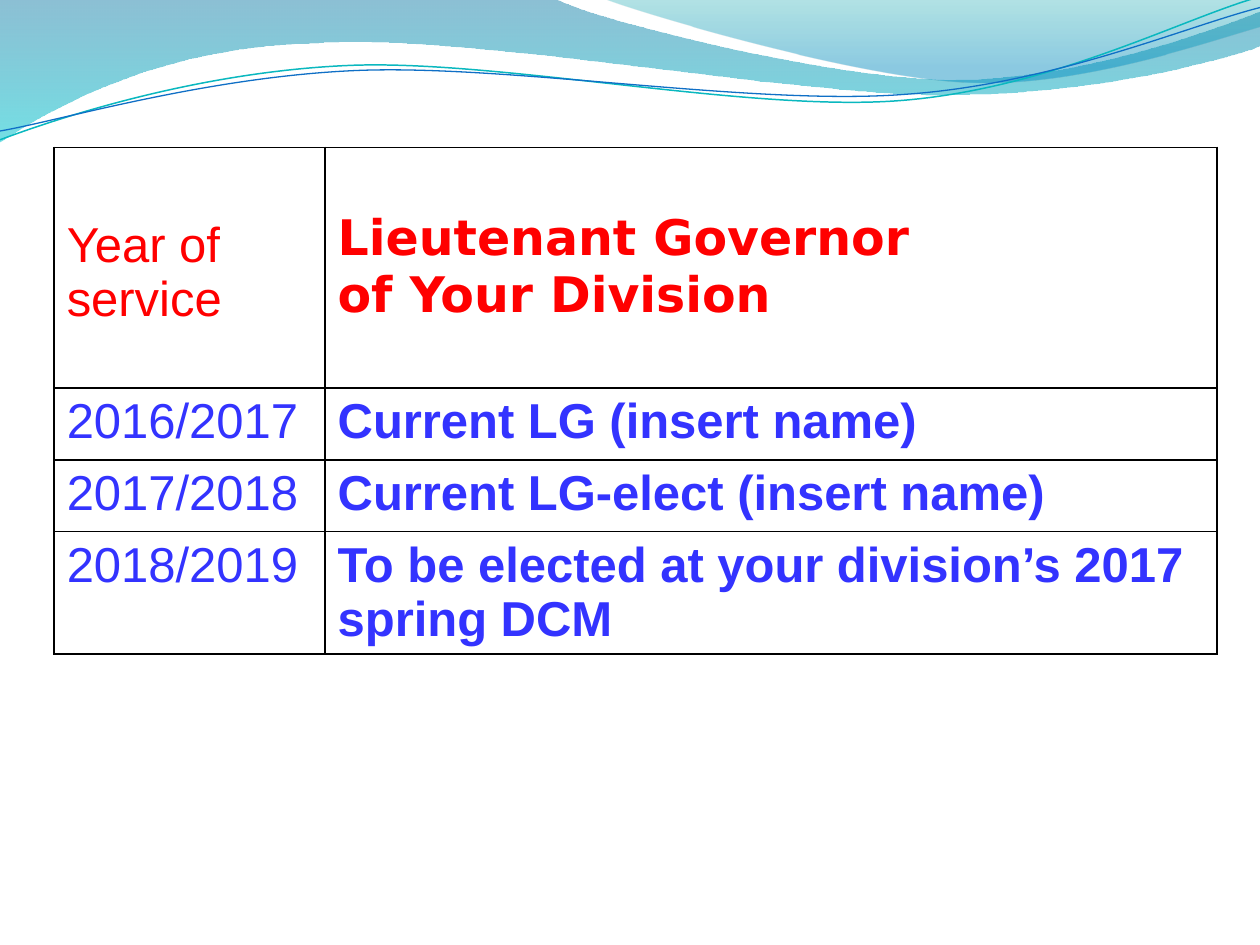
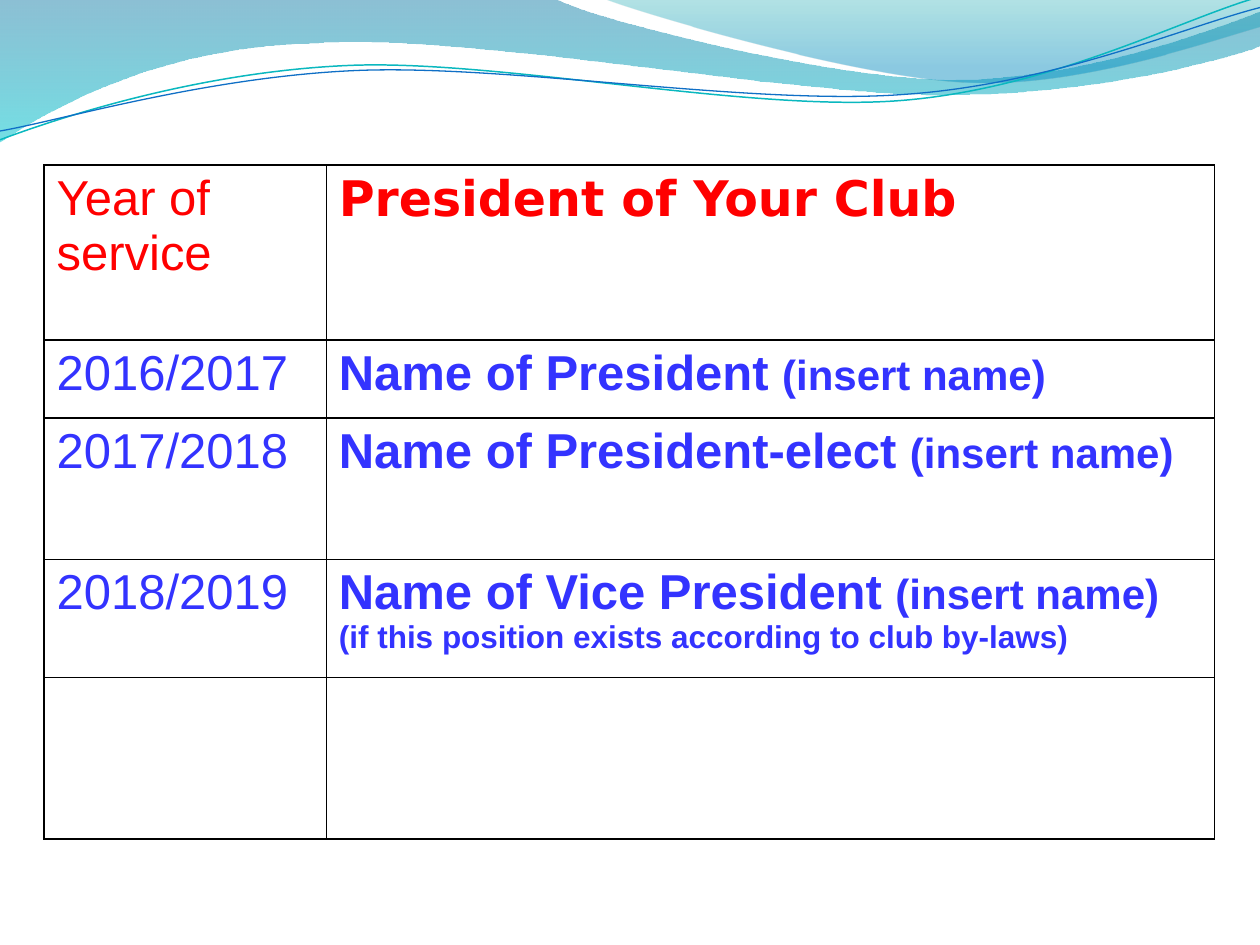
"""Build two slides listing the years of service of club and division leaders."""
import lxml.etree
import pptx
import pptx.dml.color
import pptx.oxml
import pptx.oxml.ns
import pptx.util

Inches = pptx.util.Inches
RGBColor = pptx.dml.color.RGBColor
qualified = pptx.oxml.ns.qn

RED = RGBColor(0xFF, 0x00, 0x00)
VIOLET = RGBColor(0x33, 0x33, 0xFF)
BLACK = RGBColor(0x00, 0x00, 0x00)
WAVE_BLUE = RGBColor(0x00, 0x74, 0xA1)
WAVE_TURQUOISE = RGBColor(0x00, 0xC6, 0xCF)
CREST_TEAL = RGBColor(0x00, 0xA1, 0xA9)
CREST_BLUE = RGBColor(0x00, 0x8B, 0xBF)
LINE_TEAL = RGBColor(0x0A, 0xB8, 0xBF)
LINE_BLUE = RGBColor(0x0F, 0x6F, 0xC6)

BODY_FONT = "Arial"
HEADING_FONT = "DejaVu Sans"

WAVE = [
    (0, 0), (4.4, -0.01), (4.76, 0.17, 6.64, 0.63, 7.58, 0.63),
    (8.53, 0.63, 9.58, 0.26, 10, 0.09), (10.01, 0.36),
    (9.83, 0.44, 8.7, 0.76, 7.46, 0.75), (6.22, 0.75, 3.82, 0.28, 2.57, 0.34),
    (1.29, 0.36, 0.46, 0.83, -0.01, 1.13), (0, 0),
]
CREST = [
    (4.79, -0.01), (5.09, 0.11, 6.82, 0.62, 7.69, 0.65),
    (8.56, 0.69, 9.61, 0.32, 10, 0.21), (10, 0), (4.79, -0.01),
]
TEAL_CURVE = [
    (0, 1.11), (0.48, 0.93, 1.58, 0.57, 2.77, 0.52),
    (3.95, 0.47, 5.93, 0.89, 7.13, 0.8), (8.33, 0.71, 9.38, 0.15, 9.98, -0.02),
]
BLUE_CURVE = [
    (0, 1.04), (0.47, 0.96, 1.64, 0.61, 2.83, 0.56),
    (4.03, 0.51, 5.97, 0.84, 7.17, 0.75), (8.36, 0.67, 9.41, 0.21, 10, 0.06),
]


def write_text(paragraph, text, size=28, font=BODY_FONT, color=VIOLET, bold=False):
    """Add a formatted run to a paragraph."""
    run = paragraph.add_run()
    run.text = text
    run.font.size = pptx.util.Pt(size)
    run.font.name = font
    run.font.color.rgb = color
    run.font.bold = bold


def bend_lines(shape, outline):
    """Turn the straight segments that have control points into cubic curves."""
    lines = shape.element.findall(".//" + qualified("a:lnTo"))
    for line, segment in zip(lines, outline[1:]):
        if len(segment) == 2:
            continue
        controls = [
            lxml.etree.Element(qualified("a:pt"), x=str(Inches(x) - shape.left),
                               y=str(Inches(y) - shape.top))
            for x, y in (segment[:2], segment[2:4])
        ]
        curve = lxml.etree.Element(qualified("a:cubicBezTo"))
        curve.extend(controls + list(line))
        line.getparent().replace(line, curve)


class Deck:
    """Hold the shared style, the presentation and the current slide."""

    def __init__(self):
        """Start an empty presentation."""
        self.presentation = pptx.Presentation()
        self.presentation.slide_width = Inches(10)
        self.presentation.slide_height = Inches(7.5)
        self.layout = self.presentation.slide_layouts[6]
        self.slide = None

    def add_slide(self):
        """Make a new slide the current one."""
        self.slide = self.presentation.slides.add_slide(self.layout)

    def add_outline(self, outline, close):
        """Draw a freeform and place it on the shared layout."""
        points = [(Inches(segment[-2]), Inches(segment[-1])) for segment in outline]
        builder = self.slide.shapes.build_freeform(*points[0])
        builder.add_line_segments(points[1:], close=close)
        shape = builder.convert_to_shape()
        bend_lines(shape, outline)
        shape.shadow.inherit = False
        self.layout.shapes.element.append(shape.element)
        return shape

    def add_wave(self, outline, stops):
        """Add a translucent wave; stops are position, colour and opacity."""
        shape = self.add_outline(outline, close=True)
        shape.line.fill.background()
        shape.fill.gradient()
        shape.fill.gradient_angle = 270
        for stop, (position, color, opacity) in zip(shape.fill.gradient_stops, stops):
            stop.position = position
            stop.color.rgb = color
        gradient_stops = shape.element.findall(".//" + qualified("a:gs"))
        for gradient_stop, (position, color, opacity) in zip(gradient_stops, stops):
            alpha = lxml.etree.SubElement(gradient_stop[0], qualified("a:alpha"))
            alpha.set("val", str(opacity * 1000))

    def add_curve(self, outline, color, width):
        """Add an open curved line."""
        shape = self.add_outline(outline, close=False)
        shape.fill.background()
        shape.line.color.rgb = color
        shape.line.width = pptx.util.Pt(width)

    def add_borders(self, cell):
        """Give a cell thin black borders and no fill."""
        properties = cell._tc.get_or_add_tcPr()
        for side in "LRTB":
            properties.append(pptx.oxml.parse_xml(
                f'<a:ln{side} {pptx.oxml.ns.nsdecls("a")} w="12700"><a:solidFill>'
                f'<a:srgbClr val="{BLACK}"/></a:solidFill></a:ln{side}>'
            ))
        cell.fill.background()

    def add_table(self, left, top, widths, heights, rows):
        """Add a table; each cell lists paragraphs, each a list of text and format."""
        frame = self.slide.shapes.add_table(
            len(heights), len(widths), Inches(left), Inches(top),
            Inches(sum(widths)), Inches(sum(heights)))
        table = frame.table
        table.first_row = table.horz_banding = False
        for column, width in zip(table.columns, widths):
            column.width = Inches(width)
        for row, height in zip(table.rows, heights):
            row.height = Inches(height)
        for cell in table.iter_cells():
            self.add_borders(cell)
        for row, contents in zip(table.rows, rows):
            for cell, paragraphs in zip(row.cells, contents):
                for index, runs in enumerate(paragraphs):
                    text_frame = cell.text_frame
                    paragraph = text_frame.add_paragraph() if index else text_frame.paragraphs[0]
                    for text, style in runs:
                        write_text(paragraph, text, **style)
        return table


def header_row(*title_lines):
    """Return the red heading cells."""
    title_style = {"font": HEADING_FONT, "color": RED, "bold": True}
    return [[[("Year of service", {"color": RED})]],
            [[(line, title_style)] for line in title_lines]]


def year_row(year, name, hint="", note=""):
    """Return a year cell and a bold name cell with optional smaller text."""
    paragraphs = [[(name, {"bold": True})]]
    if hint:
        paragraphs[0].append((hint, {"bold": True, "size": 24}))
    if note:
        paragraphs.append([(note, {"bold": True, "size": 18})])
    return [[[(year, {})]], paragraphs]


def main():
    """Build and save the presentation."""
    deck = Deck()
    deck.add_slide()
    deck.add_wave(WAVE, [(0, WAVE_BLUE, 45), (1, WAVE_TURQUOISE, 55)])
    deck.add_wave(CREST, [(0, CREST_TEAL, 30), (0.8, CREST_BLUE, 45)])
    deck.add_curve(TEAL_CURVE, LINE_TEAL, 0.85)
    deck.add_curve(BLUE_CURVE, LINE_BLUE, 0.75)

    governors = deck.add_table(0.43, 1.17, [2.15, 7.08], [1.91, 0.57, 0.57, 0.97], [
        header_row("Lieutenant Governor", "of Your Division"),
        year_row("2016/2017", "Current LG (insert name)"),
        year_row("2017/2018", "Current LG-elect (insert name)"),
        year_row("2018/2019", "To be elected at your division’s 2017 spring DCM"),
    ])
    governors.cell(0, 0).margin_top = Inches(0.56)
    governors.cell(0, 1).margin_top = Inches(0.5)

    deck.add_slide()
    hint = "(insert name)"
    deck.add_table(0.35, 1.31, [2.24, 7.05], [1.39, 0.62, 1.12, 0.94, 1.28], [
        header_row("President of Your Club"),
        year_row("2016/2017", "Name of President ", hint),
        year_row("2017/2018", "Name of President-elect ", hint),
        year_row("2018/2019", "Name of Vice President ", hint,
                 "(if this position exists according to club by-laws)"),
    ])
    deck.presentation.save("out.pptx")


if __name__ == "__main__":
    main()
